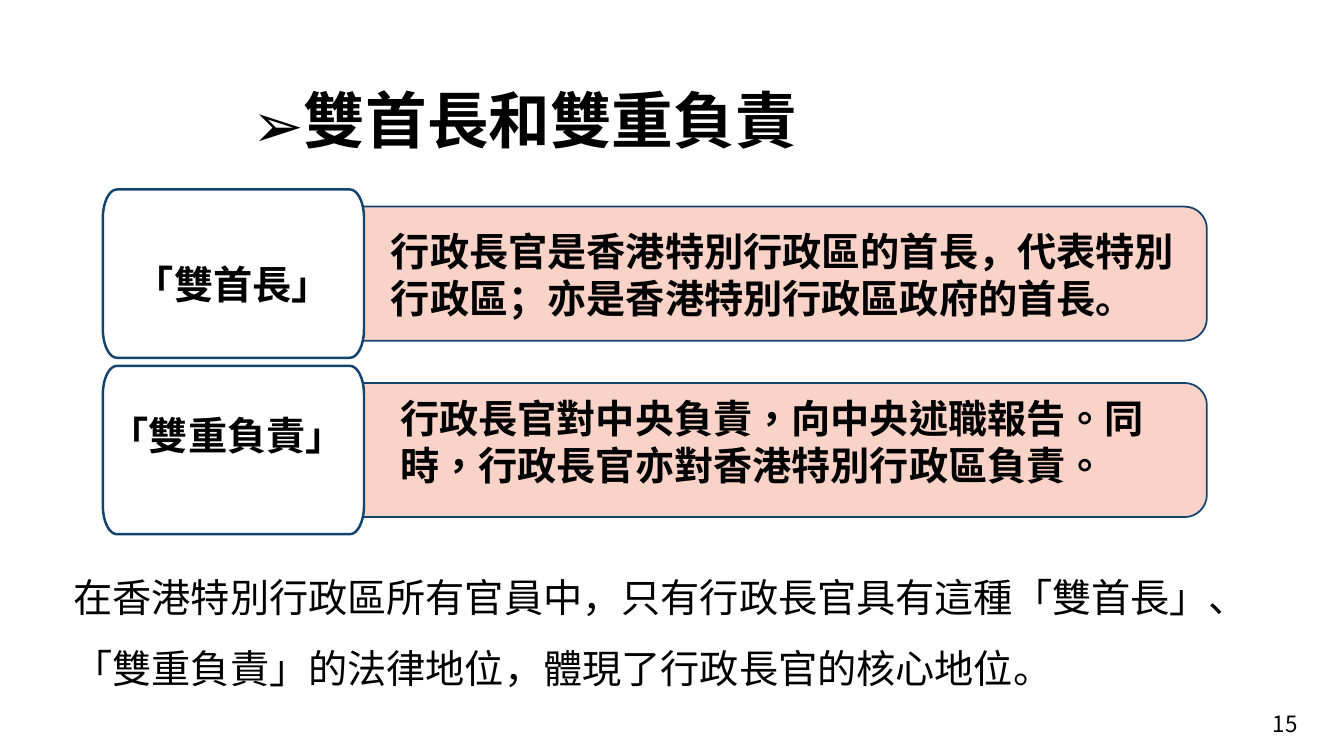
from lxml import etree
from pptx import Presentation
from pptx.dml.color import RGBColor
from pptx.enum.lang import MSO_LANGUAGE_ID as Lang
from pptx.enum.shapes import MSO_SHAPE as Shape
from pptx.enum.text import MSO_ANCHOR as Anchor, PP_ALIGN as Align
from pptx.oxml.ns import qn
from pptx.util import Inches, Pt

LATIN, CJK, SYMBOLS = "Roboto", "Noto Sans CJK SC", "Noto Sans Symbols"
BLACK, WHITE, PINK, NAVY = "000000", "FFFFFF", "F9CFC3", "14446E"
CN, TW = Lang.SIMPLIFIED_CHINESE, Lang.TRADITIONAL_CHINESE
ROW_TOP, ROW_STEP = 1.88, 1.75
BEZIER = 0.45  # control point distance from the corner, as a share of the radius

# label, label box, statement, statement box, statement language
ROWS = [
    ("「雙首長」", (1.24, 2.53, 2.15, 0.57),
     "行政長官是香港特別行政區的首長，代表特別行政區；亦是香港特別行政區政府的首長。",
     (3.78, 2.21, 8.04, 1.04), CN),
    ("「雙重負責」", (0.99, 4.03, 2.75, 0.57),
     "行政長官對中央負責，向中央述職報告。同時，行政長官亦對香港特別行政區負責。",
     (3.87, 3.86, 7.73, 1.04), TW),
]


def rgb(value):
    return RGBColor.from_string(value)


def add_run(p, text, lang=CN, font=LATIN, **formats):
    r = p.add_run()
    r.text = text
    for name, value in {"name": font, "language_id": lang, **formats}.items():
        setattr(r.font, name, value)
    r.font.color.rgb = rgb(BLACK)
    etree.SubElement(r.font._element, qn("a:ea"), typeface=CJK)


def set_frame(sp, **formats):
    tf = sp.text_frame
    for name, value in {"word_wrap": True, **formats}.items():
        setattr(tf, name, value)
    return tf.paragraphs[0]


def add_text(slide, box, anchor=Anchor.TOP):
    sp = slide.shapes.add_textbox(*map(Inches, box))
    return set_frame(sp, vertical_anchor=anchor)


def corner(x, y, rx, ry, top):
    """Start, two controls and end of a rounded corner, clockwise."""
    sx, sy = (-rx if top else rx), (ry if top else -ry)
    side = [(x, y + sy), (x, y + sy * BEZIER)]
    level = [(x + sx * BEZIER, y), (x + sx, y)]
    return side, level


def right_corners(x, top, bottom, rx, ry):
    upper = [(x - rx, top), (x - rx * BEZIER, top),
             (x, top + ry * BEZIER), (x, top + ry)]
    lower = [(px, top + bottom - py) for px, py in reversed(upper)]
    return upper + lower


def add_rounded(slide, box, rx, ry, fill, line_width, round_left=True):
    x, y, w, h = box
    points = right_corners(x + w, y, y + h, rx, ry)
    if round_left:
        points += [(2 * x + w - px, 2 * y + h - py) for px, py in points]
    curves = len(points) // 4
    if not round_left:
        points += [(x, y + h), (x, y)]
    points = [(Inches(px), Inches(py)) for px, py in points]
    builder = slide.shapes.build_freeform(*points[0])
    builder.add_line_segments(points[1:], close=True)
    sp = builder.convert_to_shape()

    # Turn each corner's three line segments into one curve
    segments = list(sp._element.iter(qn("a:lnTo")))
    for i in range(curves):
        parts = segments[4 * i:4 * i + 3]
        curve = etree.Element(qn("a:cubicBezTo"))
        parts[0].addprevious(curve)
        for part in parts:
            curve.append(part[0])
            part.getparent().remove(part)

    sp.shadow.inherit = False
    sp.fill.solid()
    sp.fill.fore_color.rgb = rgb(fill)
    sp.line.color.rgb = rgb(NAVY)
    sp.line.width = Pt(line_width)
    return sp


def set_alpha(sp, percent):
    color = sp._element.spPr.find(qn("a:solidFill"))[0]
    etree.SubElement(color, qn("a:alpha"), val=str(percent * 1000))


def add_title(slide, text):
    sp = slide.shapes.add_shape(Shape.ROUNDED_RECTANGLE,
                                *map(Inches, (1.93, 0.82, 6.55, 0.81)))
    sp.shadow.inherit = False
    sp.fill.background()
    sp.line.fill.background()
    p = set_frame(sp, vertical_anchor=Anchor.MIDDLE,
                  margin_left=Inches(0.27), margin_right=Inches(0.27),
                  margin_top=Inches(0.03), margin_bottom=Inches(0.03))
    p.alignment, p.line_spacing = Align.CENTER, 0.9
    pPr = p._p.get_or_add_pPr()
    pPr.set("marL", str(Inches(0.38)))
    pPr.set("indent", str(-Inches(0.38)))
    etree.SubElement(pPr, qn("a:buFont"), typeface=SYMBOLS)
    etree.SubElement(pPr, qn("a:buChar"), char="➢")
    add_run(p, text, size=Pt(44), bold=True)


def main():
    prs = Presentation()
    prs.slide_width, prs.slide_height = Inches(13.33), Inches(7.5)
    slide = prs.slides.add_slide(prs.slide_layouts[6])

    # Page number
    p = add_text(slide, (9.97, 6.98, 3, 0.4), Anchor.MIDDLE)
    p.alignment = Align.RIGHT
    add_run(p, "15", font=CJK, size=Pt(16))

    # Closing remark
    p = add_text(slide, (0.63, 5.44, 11.58, 1.43), Anchor.MIDDLE)
    p.line_spacing = 1.5
    add_run(p, "在香港特別行政區所有官員中，只有行政長官具有這種「雙首長」、"
               "「雙重負責」的法律地位，體現了行政長官的核心地位。", size=Pt(28))

    # Panels with their label cards
    for i in range(len(ROWS)):
        top = ROW_TOP + i * ROW_STEP
        panel = add_rounded(slide, (3.2, top + 0.17, 8.77, 1.33), 0.22, 0.22,
                            PINK, 1.25, round_left=False)
        set_alpha(panel, 90)
        add_rounded(slide, (1.02, top, 2.59, 1.67), 0.14, 0.28, WHITE, 1.75)

    # Labels and statements
    for label, label_box, statement, statement_box, lang in ROWS:
        add_run(add_text(slide, label_box), label, size=Pt(28), bold=True)
        add_run(add_text(slide, statement_box), statement, lang,
                size=Pt(28), bold=True)

    add_title(slide, "雙首長和雙重負責")
    prs.save("out.pptx")


if __name__ == "__main__":
    main()
